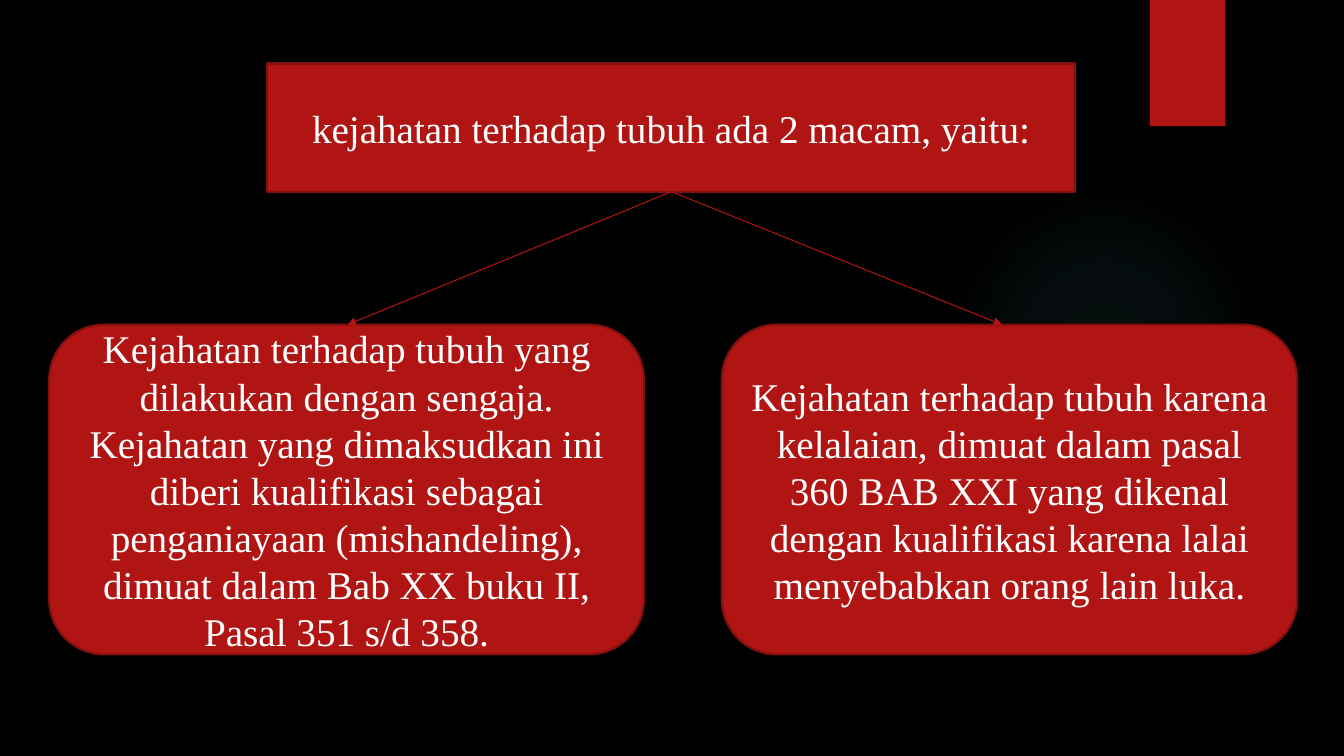
from lxml.etree import SubElement
from pptx import Presentation
from pptx.dml.color import RGBColor
from pptx.enum.shapes import MSO_CONNECTOR, MSO_SHAPE
from pptx.enum.text import MSO_ANCHOR, MSO_AUTO_SIZE, PP_ALIGN
from pptx.oxml import parse_xml
from pptx.oxml.ns import nsdecls, qn
from pptx.util import Cm, Pt

COLORS = {"bg": "000000", "red": "B01513", "edge": "82100E", "text": "FFFFFF", "glow": "50B9C1"}
RGB = {name: RGBColor.from_string(value) for name, value in COLORS.items()}
FRAME = {"word_wrap": True, "auto_size": MSO_AUTO_SIZE.NONE, "vertical_anchor": MSO_ANCHOR.MIDDLE}
FONT = {"name": "Times New Roman", "size": Pt(28), "bold": False}


def add_shape(kind, *box):
    sp = s.shapes.add_shape(kind, *map(Cm, box))
    sp.shadow.inherit = False
    sp.line.fill.background()
    return sp


def fill_box(sp, text):
    sp.fill.solid()
    sp.fill.fore_color.rgb = RGB["red"]
    sp.line.color.rgb = RGB["edge"]
    sp.line.width = Pt(1.5)
    tf = sp.text_frame
    for key, value in FRAME.items():
        setattr(tf, key, value)
    p = tf.paragraphs[0]
    p.alignment = PP_ALIGN.CENTER
    r = p.add_run()
    r.text = text
    for key, value in FONT.items():
        setattr(r.font, key, value)
    r.font.color.rgb = RGB["text"]


prs = Presentation()
prs.slide_width, prs.slide_height = Cm(33.87), Cm(19.05)
s = prs.slides.add_slide(prs.slide_layouts[5])
s.background.fill.solid()
s.background.fill.fore_color.rgb = RGB["bg"]

glow = add_shape(MSO_SHAPE.OVAL, 23.9, 4.65, 7.82, 7.82)
stops = "".join(
    f'<a:gs pos="{pos * 1000}"><a:srgbClr val="{COLORS["glow"]}">'
    f'<a:alpha val="{alpha * 1000}"/></a:srgbClr></a:gs>'
    for pos, alpha in ((0, 7), (36, 6), (69, 0))
)
gradient = parse_xml(
    f'<a:gradFill {nsdecls("a")}><a:gsLst>{stops}</a:gsLst><a:path path="circle">'
    '<a:fillToRect l="50000" t="50000" r="50000" b="50000"/></a:path></a:gradFill>'
)
glow._element.spPr.find(qn("a:prstGeom")).addnext(gradient)

ribbon = add_shape(MSO_SHAPE.RECTANGLE, 28.98, 0, 1.9, 3.18)
ribbon.fill.solid()
ribbon.fill.fore_color.rgb = RGB["red"]

title = s.shapes.title
title.left, title.top, title.width, title.height = map(Cm, (6.73, 1.6, 20.37, 3.23))
fill_box(title, "kejahatan terhadap tubuh ada 2 macam, yaitu:")

kinds = [
    (1.24, 14.99, 8.76,
     "Kejahatan terhadap tubuh yang dilakukan dengan sengaja. Kejahatan yang dimaksudkan ini "
     "diberi kualifikasi sebagai penganiayaan (mishandeling), dimuat dalam Bab XX buku II, "
     "Pasal 351 s/d 358."),
    (18.19, 14.5, 25.25,
     "Kejahatan terhadap tubuh karena kelalaian, dimuat dalam pasal 360 BAB XXI yang dikenal "
     "dengan kualifikasi karena lalai menyebabkan orang lain luka."),
]
for left, width, tip, text in kinds:
    fill_box(add_shape(MSO_SHAPE.ROUNDED_RECTANGLE, left, 8.18, width, 8.31), text)
    arrow = s.shapes.add_connector(MSO_CONNECTOR.STRAIGHT, *map(Cm, (16.92, 4.83, tip, 8.18)))
    arrow.line.color.rgb = RGB["red"]
    arrow.line.width = Pt(0.75)
    SubElement(arrow.line._get_or_add_ln(), qn("a:tailEnd"), type="triangle")
    SubElement(arrow._element.spPr, qn("a:effectLst"))

prs.save("out.pptx")
